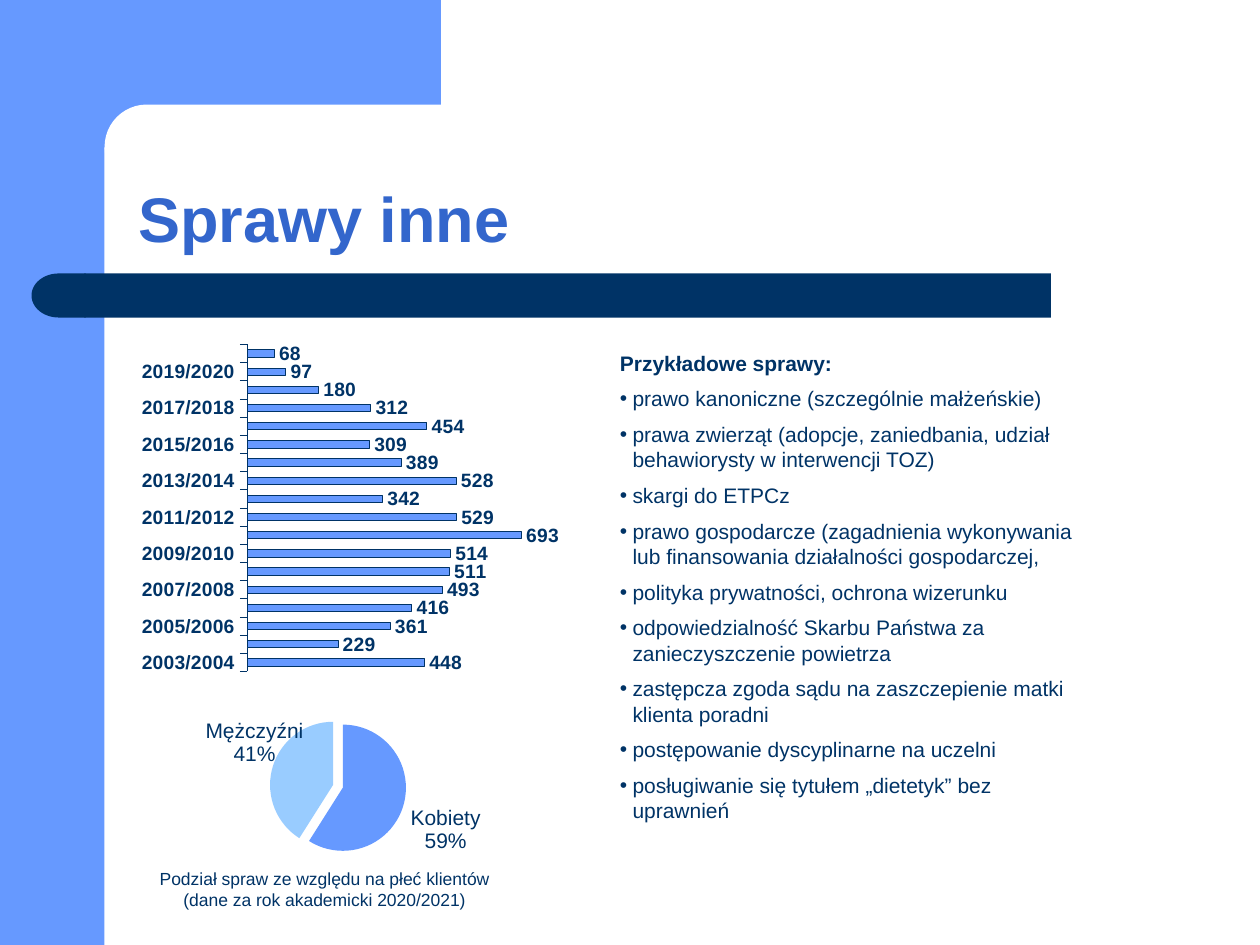
"""Build the slide on other cases: cases per year, clients by sex and sample matters."""
from dataclasses import dataclass

from lxml.etree import SubElement
from pptx import Presentation
from pptx.chart.data import CategoryChartData
from pptx.dml.color import RGBColor
from pptx.enum.chart import XL_CHART_TYPE, XL_LABEL_POSITION, XL_TICK_MARK
from pptx.enum.shapes import MSO_SHAPE
from pptx.enum.text import MSO_ANCHOR, MSO_AUTO_SIZE, PP_ALIGN
from pptx.oxml import parse_xml
from pptx.oxml.ns import nsdecls, qn
from pptx.util import Pt


@dataclass(frozen=True)
class Theme:
    font: str = "Arial"
    navy: RGBColor = RGBColor(0x00, 0x33, 0x66)
    blue: RGBColor = RGBColor(0x66, 0x99, 0xFF)
    sky: RGBColor = RGBColor(0x99, 0xCC, 0xFF)
    heading: RGBColor = RGBColor(0x33, 0x66, 0xCC)
    white: RGBColor = RGBColor(0xFF, 0xFF, 0xFF)
    title_size: int = 36
    text_size: int = 12
    bar_size: int = 11
    caption_size: int = 10


def style_font(font, size, color, bold=False):
    font.name, font.size, font.bold = theme.font, Pt(size), bold
    font.color.rgb = color


def manual_layout(**settings):
    layout = parse_xml(f"<c:layout {nsdecls('c')}><c:manualLayout/></c:layout>")
    for tag, value in settings.items():
        SubElement(layout[0], qn(f"c:{tag}")).set("val", str(value))
    return layout


theme = Theme()
PX = 9144
deck = Presentation()
deck.slide_width, deck.slide_height = 1000 * PX, 750 * PX
slide = deck.slides.add_slide(deck.slide_layouts[1])
shapes = slide.shapes

for preset, bounds, color, rounding, turn in (
    (MSO_SHAPE.RECTANGLE, (0, 0, 83, 750), theme.blue, None, 0),
    (MSO_SHAPE.RECTANGLE, (75, 0, 275, 117), theme.blue, None, 0),
    (MSO_SHAPE.ROUNDED_RECTANGLE, (83, 83, 558, 67), theme.white, 0.5, 0),
    (MSO_SHAPE.ROUNDED_RECTANGLE, (67, 217, 767, 35), theme.navy, 0, 0),
    (MSO_SHAPE.FLOWCHART_DELAY, (25, 217, 43, 35), theme.navy, None, 180),
):
    decoration = shapes.add_shape(preset, *(side * PX for side in bounds))
    decoration.shadow.inherit = False
    decoration.fill.solid()
    decoration.fill.fore_color.rgb = color
    decoration.line.fill.background()
    decoration.rotation = turn
    if rounding is not None:
        decoration.adjustments[0] = rounding

heading = shapes.title
matters = slide.placeholders[1]
for holder, bounds in ((heading, (100, 83, 900, 125)), (matters, (482, 273, 396, 384))):
    holder.left, holder.top, holder.width, holder.height = (side * PX for side in bounds)
    shapes._spTree.append(holder._element)

heading.text_frame.auto_size = MSO_AUTO_SIZE.NONE
heading.text_frame.vertical_anchor = MSO_ANCHOR.BOTTOM
heading_line = heading.text_frame.paragraphs[0]
heading_line.alignment = PP_ALIGN.LEFT
heading_line.line_spacing = 0.9
heading_run = heading_line.add_run()
heading_run.text = "Sprawy inne"
style_font(heading_run.font, theme.title_size, theme.heading, True)

matters.text_frame.auto_size = MSO_AUTO_SIZE.SHAPE_TO_FIT_TEXT
for number, matter in enumerate((
    "Przykładowe sprawy:",
    "prawo kanoniczne (szczególnie małżeńskie)",
    "prawa zwierząt (adopcje, zaniedbania, udział behawiorysty w interwencji TOZ)",
    "skargi do ETPCz",
    "prawo gospodarcze (zagadnienia wykonywania lub finansowania działalności gospodarczej,",
    "polityka prywatności, ochrona wizerunku",
    "odpowiedzialność Skarbu Państwa za zanieczyszczenie powietrza",
    "zastępcza zgoda sądu na zaszczepienie matki klienta poradni",
    "postępowanie dyscyplinarne na uczelni",
    "posługiwanie się tytułem „dietetyk” bez uprawnień",
)):
    frame = matters.text_frame
    item = frame.add_paragraph() if number else frame.paragraphs[0]
    item.space_before = Pt(theme.text_size / 2)
    indent = 10 * PX if number else 0
    properties = item._p.get_or_add_pPr()
    properties.set("marL", str(indent))
    properties.set("indent", str(-indent))
    if number:
        SubElement(properties, qn("a:buChar")).set("char", "•")
    else:
        SubElement(properties, qn("a:buNone"))
    item_run = item.add_run()
    item_run.text = matter
    style_font(item_run.font, theme.text_size, theme.navy, number == 0)

yearly_cases = (448, 229, 361, 416, 493, 511, 514, 693, 529,
                342, 528, 389, 309, 454, 312, 180, 97, 68)
yearly_data = CategoryChartData()
yearly_data.categories = [f"{year}/{year + 1}" for year in range(2003, 2003 + len(yearly_cases))]
yearly_data.add_series("Series 1", yearly_cases)
sex_data = CategoryChartData()
sex_data.categories = ["Kobiety", "Mężczyźni"]
sex_data.add_series("Series 1", (59, 41))

charts = []
for chart_type, bounds, data, size, bold, area in (
    (XL_CHART_TYPE.BAR_CLUSTERED, (75, 249, 433, 302), yearly_data, theme.bar_size, True,
     (0.28, 0.08, 0.58, 0.86)),
    (XL_CHART_TYPE.PIE, (41, 540, 433, 165), sex_data, theme.text_size, False,
     (0.4, 0.18, 0.25, 0.66)),
):
    chart = shapes.add_chart(chart_type, *(side * PX for side in bounds), data).chart
    chart.has_legend = chart.has_title = False
    style_font(chart.font, size, theme.navy, bold)
    chart.plots[0].vary_by_categories = chart_type == XL_CHART_TYPE.PIE
    plot_area = chart._chartSpace.chart.plotArea
    for automatic in plot_area.findall(qn("c:layout")):
        plot_area.remove(automatic)
    left, top, width, height = area
    plot_area.insert(0, manual_layout(layoutTarget="inner", xMode="edge", yMode="edge",
                                      x=left, y=top, w=width, h=height))
    labels = chart.plots[0].series[0].data_labels
    style_font(labels.font, size, theme.navy, bold)
    labels.position = XL_LABEL_POSITION.OUTSIDE_END
    charts.append(chart)

yearly_chart, sex_chart = charts
yearly_chart.plots[0].gap_width = 150
bars = yearly_chart.plots[0].series[0]
bars.data_labels.show_value = True
bars.invert_if_negative = False
bars.format.fill.solid()
bars.format.fill.fore_color.rgb = theme.blue
bars.format.line.color.rgb = theme.navy
bars.format.line.width = Pt(0.25)
years, counts = yearly_chart.category_axis, yearly_chart.value_axis
years.major_tick_mark = XL_TICK_MARK.OUTSIDE
years.format.line.color.rgb = theme.navy
years.format.line.width = Pt(0.16)
style_font(years.tick_labels.font, theme.bar_size, theme.navy, True)
counts.minimum_scale, counts.maximum_scale = 0, 800
counts.has_major_gridlines = False
counts.visible = False

slices = sex_chart.plots[0].series[0]
for position, color in enumerate((theme.blue, theme.sky)):
    sector = slices.points[position].format
    sector.fill.solid()
    sector.fill.fore_color.rgb = color
    sector.line.fill.background()
explosion = parse_xml(f'<c:explosion {nsdecls("c")} val="8"/>')
slices._element.find(qn("c:dPt")).addprevious(explosion)
men_label = slices.points[1].data_label
style_font(men_label.font, theme.text_size, theme.navy)
men_label.position = XL_LABEL_POSITION.OUTSIDE_END
sex_labels = slices._element.find(qn("c:dLbls"))
men_element = sex_labels.find(qn("c:dLbl"))
men_element.find(qn("c:idx")).addnext(manual_layout(x=0.07, y=0))
slices.data_labels.show_value = False
slices.data_labels.show_category_name = True
slices.data_labels.show_percentage = True
for element in (sex_labels, men_element):
    for tag, shown in (("showVal", 0), ("showCatName", 1), ("showPercent", 1)):
        element.find(qn(f"c:{tag}")).set("val", str(shown))
    separator = parse_xml(f"<c:separator {nsdecls('c')}>\n</c:separator>")
    element.find(qn("c:showBubbleSize")).addnext(separator)

caption = shapes.add_textbox(106 * PX, 684 * PX, 303 * PX, 43 * PX)
caption.text_frame.word_wrap = True
caption.text_frame.auto_size = MSO_AUTO_SIZE.SHAPE_TO_FIT_TEXT
caption_line = caption.text_frame.paragraphs[0]
caption_line.alignment = PP_ALIGN.CENTER
caption_line.space_before = Pt(theme.caption_size / 2)
caption_run = caption_line.add_run()
caption_run.text = "Podział spraw ze względu na płeć klientów (dane za rok akademicki 2020/2021)"
style_font(caption_run.font, theme.caption_size, theme.navy)

deck.save("out.pptx")
